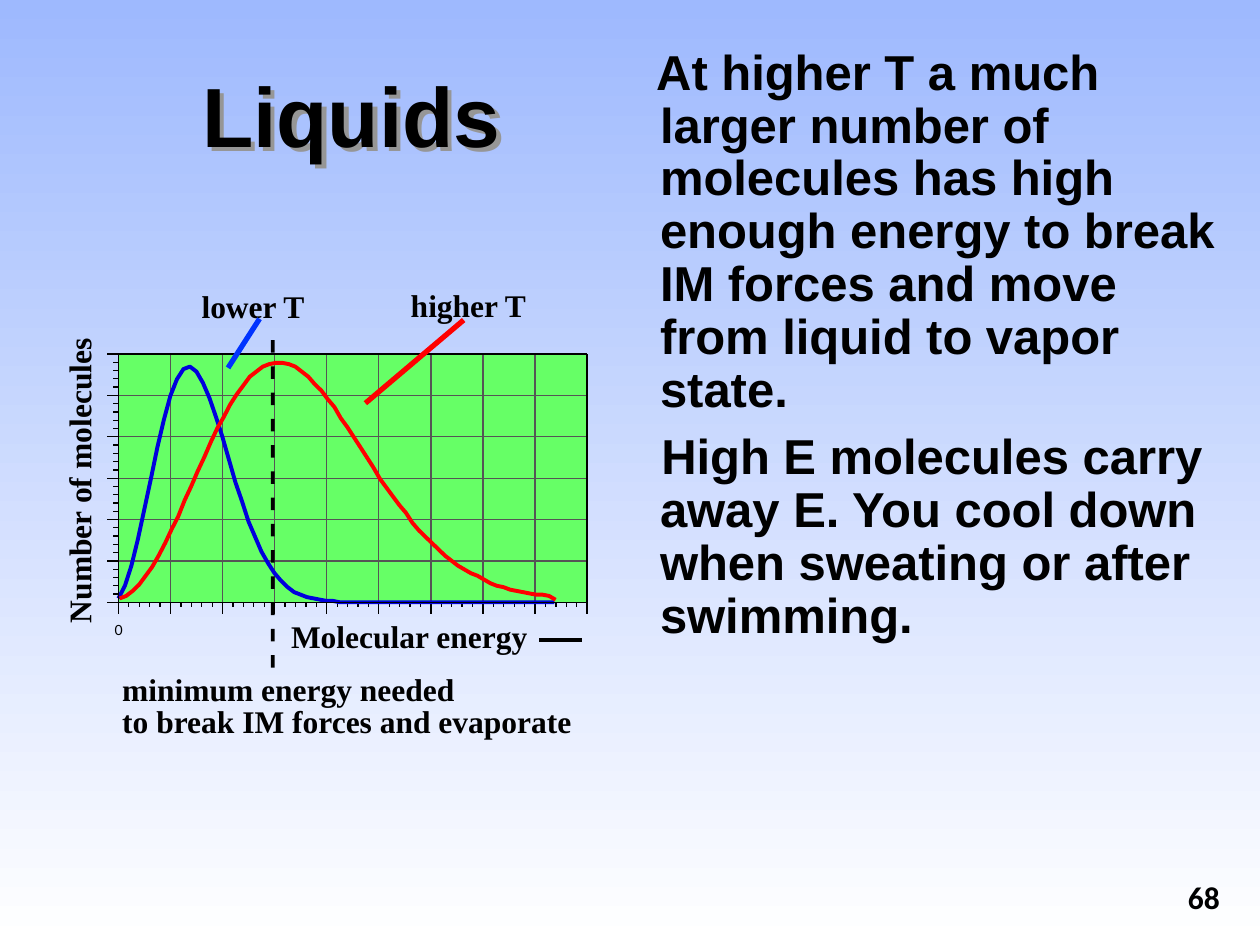
from lxml import etree
from pptx import Presentation
from pptx.dml.color import RGBColor
from pptx.enum.shapes import MSO_CONNECTOR, MSO_SHAPE
from pptx.enum.text import MSO_ANCHOR, PP_ALIGN
from pptx.oxml.ns import qn
from pptx.util import Inches, Pt

STRAIGHT = MSO_CONNECTOR.STRAIGHT
RECTANGLE = MSO_SHAPE.RECTANGLE
MIDDLE, CENTER = MSO_ANCHOR.MIDDLE, PP_ALIGN.CENTER

BLACK, GRID_GRAY, RED = "000000", "555555", "FF0000"
SERIF = "Times New Roman"

# Plot area in inches, with its major grid and minor ticks per cell
LEFT, TOP, RIGHT, BOTTOM = 0.94, 2.81, 4.66, 4.78
COLUMNS, ROWS, MINOR = 9, 6, 5
MAJOR_TICK, MINOR_TICK = 0.09, 0.04
CURVE_STEP = 3.46 / 67

LOWER_T = [
    4.75, 4.65, 4.49, 4.28, 4.04, 3.8, 3.55, 3.33, 3.14, 3.01, 2.93, 2.91,
    2.95, 3.04, 3.16, 3.31, 3.47, 3.65, 3.83, 3.98, 4.14, 4.26, 4.38, 4.47,
    4.55, 4.61, 4.66, 4.7, 4.72, 4.74, 4.75, 4.76, 4.77, 4.77,
] + [BOTTOM] * 34
HIGHER_T = [
    4.75, 4.73, 4.69, 4.64, 4.57, 4.5, 4.41, 4.31, 4.2, 4.1, 3.97, 3.86,
    3.74, 3.63, 3.51, 3.4, 3.31, 3.21, 3.13, 3.06, 2.99, 2.95, 2.91, 2.89,
    2.88, 2.88, 2.89, 2.91, 2.95, 2.99, 3.05, 3.1, 3.17, 3.23, 3.32, 3.39,
    3.47, 3.55, 3.63, 3.71, 3.8, 3.87, 3.94, 4.01, 4.07, 4.15, 4.21, 4.26,
    4.31, 4.36, 4.41, 4.45, 4.49, 4.52, 4.55, 4.57, 4.6, 4.63, 4.65, 4.66,
    4.68, 4.69, 4.7, 4.71, 4.72, 4.72, 4.73, 4.76,
]

LABELS = [
    ("Number of molecules", (-0.51, 3.66, 2.27, 0.3), 270),
    ("Molecular energy", (2.31, 4.9, 1.88, 0.3), 0),
    ("minimum energy needed", (0.97, 5.32, 2.64, 0.3), 0),
    ("to break IM forces and evaporate", (0.97, 5.57, 3.58, 0.3), 0),
    ("higher T", (3.26, 2.27, 0.92, 0.3), 0),
    ("lower T", (1.6, 2.28, 0.83, 0.3), 0),
]
BODY = [
    ("At higher T a much larger number of molecules has high enough energy "
     "to break IM forces and move from liquid to vapor state.", -0.03),
    ("High E molecules carry away E. You cool down when sweating or after "
     "swimming.", 0.01),
]


def color(hex_value):
    return RGBColor.from_string(hex_value)


def inches(values):
    return [Inches(value) for value in values]


def add_effects(shape):
    """Give the shape an empty effect list, which means no shadow."""
    properties = shape._element.find(qn("p:spPr"))
    return etree.SubElement(properties, qn("a:effectLst"))


def add_line(slide, start, end, line_color=BLACK, width=0.75):
    line = slide.shapes.add_connector(STRAIGHT, *inches(start + end))
    line.line.color.rgb = color(line_color)
    line.line.width = Pt(width)
    add_effects(line)


def add_bar(slide, box, fill_color):
    bar = slide.shapes.add_shape(RECTANGLE, *inches(box))
    bar.shadow.inherit = False
    bar.fill.solid()
    bar.fill.fore_color.rgb = color(fill_color)
    bar.line.fill.background()


def add_curve(slide, left, heights, line_color):
    points = [(Inches(left + index * CURVE_STEP), Inches(y))
              for index, y in enumerate(heights)]
    builder = slide.shapes.build_freeform(*points[0])
    builder.add_line_segments(points[1:], close=False)
    curve = builder.convert_to_shape()
    curve.shadow.inherit = False
    curve.fill.background()
    curve.line.color.rgb = color(line_color)
    curve.line.width = Pt(2.25)


def add_text(slide, box, texts, size, font, bold=True, inset=(0, 0),
             wrap=False, rotation=0, anchor=None, paragraph_format=None):
    """Add a text box with one paragraph per text and return the box."""
    shape = slide.shapes.add_textbox(*inches(box))
    shape.rotation = rotation
    frame = shape.text_frame
    across, down = inches(inset)
    frame_format = {"word_wrap": wrap, "vertical_anchor": anchor,
                    "margin_left": across, "margin_right": across,
                    "margin_top": down, "margin_bottom": down}
    for name, value in frame_format.items():
        setattr(frame, name, value)
    frame.text = "\n".join(texts)
    for paragraph in frame.paragraphs:
        for name, value in (paragraph_format or {}).items():
            setattr(paragraph, name, value)
        run_font = paragraph.runs[0].font
        for name, value in {"size": Pt(size), "name": font, "bold": bold}.items():
            setattr(run_font, name, value)
        run_font.color.rgb = color(BLACK)
    return shape


def add_text_shadow(shape):
    """Cast a shadow from an unfilled box, so that its letters throw it."""
    shadow = etree.SubElement(add_effects(shape), qn("a:outerShdw"),
                              dist="45000", dir="2700000")
    etree.SubElement(shadow, qn("a:srgbClr"), val="969696")


def add_grid(slide):
    """Draw ticks along both axes and grid lines at the inner major steps."""
    for step in range(COLUMNS * MINOR + 1):
        x = LEFT + step * (RIGHT - LEFT) / (COLUMNS * MINOR)
        major = step % MINOR == 0
        if major and 0 < step < COLUMNS * MINOR:
            add_line(slide, (x, BOTTOM), (x, TOP), GRID_GRAY)
        tick = MAJOR_TICK if major else MINOR_TICK
        add_line(slide, (x, BOTTOM), (x, BOTTOM + tick))
    for step in range(ROWS * MINOR + 1):
        y = BOTTOM - step * (BOTTOM - TOP) / (ROWS * MINOR)
        major = step % MINOR == 0
        if major and 0 < step < ROWS * MINOR:
            add_line(slide, (LEFT, y), (RIGHT, y), GRID_GRAY)
        tick = MAJOR_TICK if major else MINOR_TICK
        add_line(slide, (LEFT, y), (LEFT - tick, y))


def add_frame(slide):
    corners = [(LEFT, TOP), (RIGHT, TOP), (RIGHT, BOTTOM), (LEFT, BOTTOM)]
    for start, end in zip(corners, corners[1:] + corners[:1]):
        add_line(slide, start, end)


def add_energy_plot(slide):
    add_bar(slide, (LEFT, TOP, RIGHT - LEFT, BOTTOM - TOP), "66FF66")
    add_grid(slide)
    add_text(slide, (0.91, 4.93, 0.06, 0.13), ["0"], 8, "Lato", bold=False)
    add_curve(slide, 0.94, LOWER_T, "0000DD")
    add_frame(slide)
    add_curve(slide, 0.95, HIGHER_T, RED)
    for dash in range(13):
        add_bar(slide, (2.15, 2.7 + dash * 2.5 / 12, 0.03, 0.1), BLACK)
    for text, box, rotation in LABELS:
        add_text(slide, box, [text], 18, SERIF, rotation=rotation)
    add_line(slide, (4.28, 5.08), (4.62, 5.08), BLACK, 2.25)
    add_line(slide, (2.9, 3.2), (3.68, 2.54), RED, 3)
    add_line(slide, (1.81, 2.92), (2.06, 2.53), "0033FF", 3)


def add_body(slide):
    body = add_text(
        slide, (4.83, 0.33, 4.92, 6.92), [text for text, _ in BODY], 28,
        "Arial", inset=(0.1, 0.05), wrap=True,
        paragraph_format={"line_spacing": 0.9, "space_before": Pt(8)})
    for paragraph, (_, indent) in zip(body.text_frame.paragraphs, BODY):
        properties = paragraph._element.get_or_add_pPr()
        properties.set("marL", str(Inches(0.31)))
        properties.set("indent", str(Inches(indent)))


def set_background(slide):
    fill = slide.background.fill
    fill.gradient()
    fill.gradient_angle = 270
    for stop, hex_value in zip(fill.gradient_stops, ("9EB9FE", "FFFFFF")):
        stop.color.rgb = color(hex_value)


def main():
    presentation = Presentation()
    presentation.slide_width, presentation.slide_height = inches((10, 7.5))
    slide = presentation.slides.add_slide(presentation.slide_layouts[6])
    set_background(slide)
    add_text(slide, (9.33, 6.92, 0.5, 0.4), ["68"], 18, "Calibri",
             inset=(0.1, 0.05))
    title = add_text(slide, (1.25, 0.33, 3.08, 1.25), ["Liquids"], 48, "Arial",
                     inset=(0.1, 0.05), wrap=True, anchor=MIDDLE,
                     paragraph_format={"alignment": CENTER, "line_spacing": 0.9})
    add_text_shadow(title)
    add_body(slide)
    add_energy_plot(slide)
    presentation.save("out.pptx")


if __name__ == "__main__":
    main()
